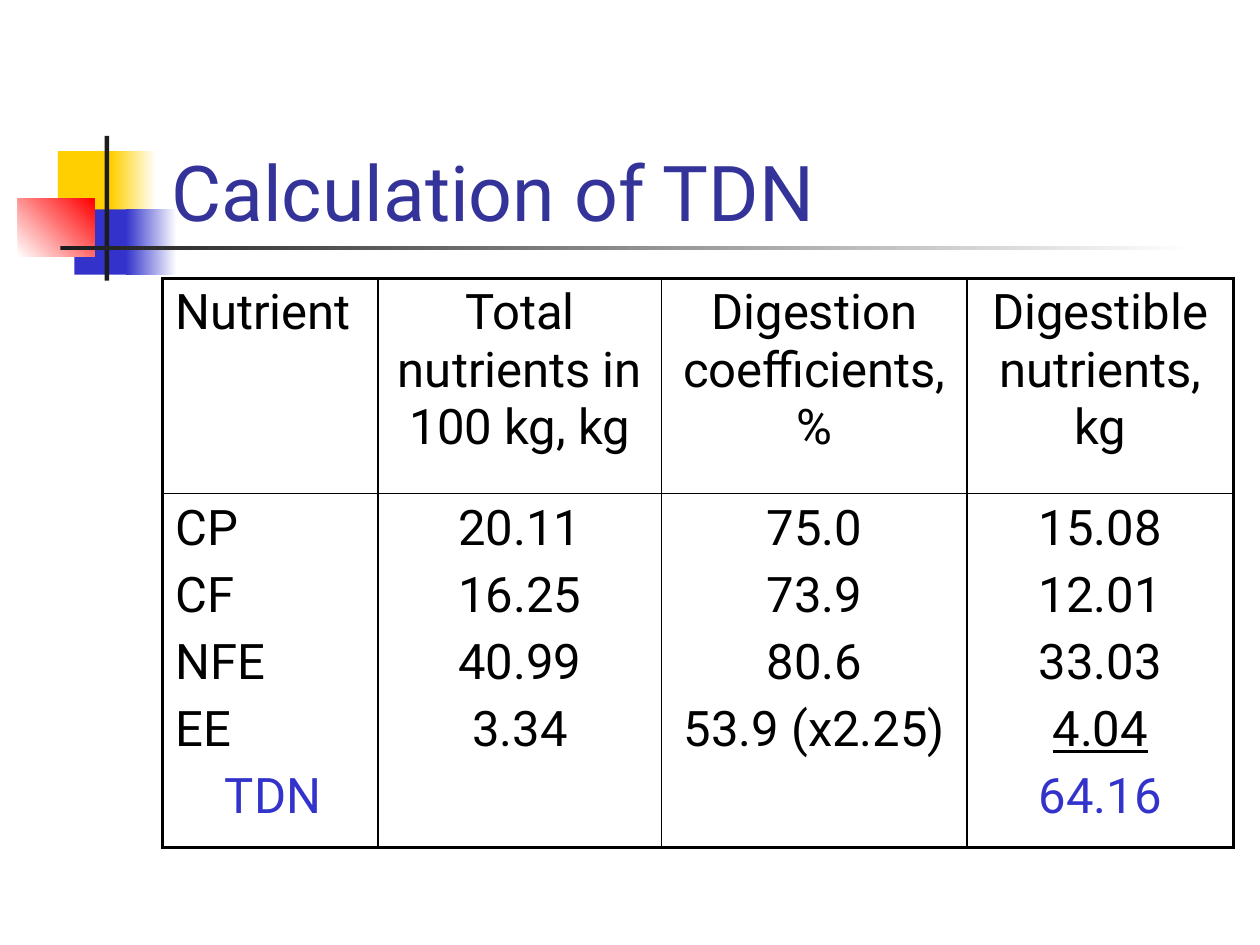
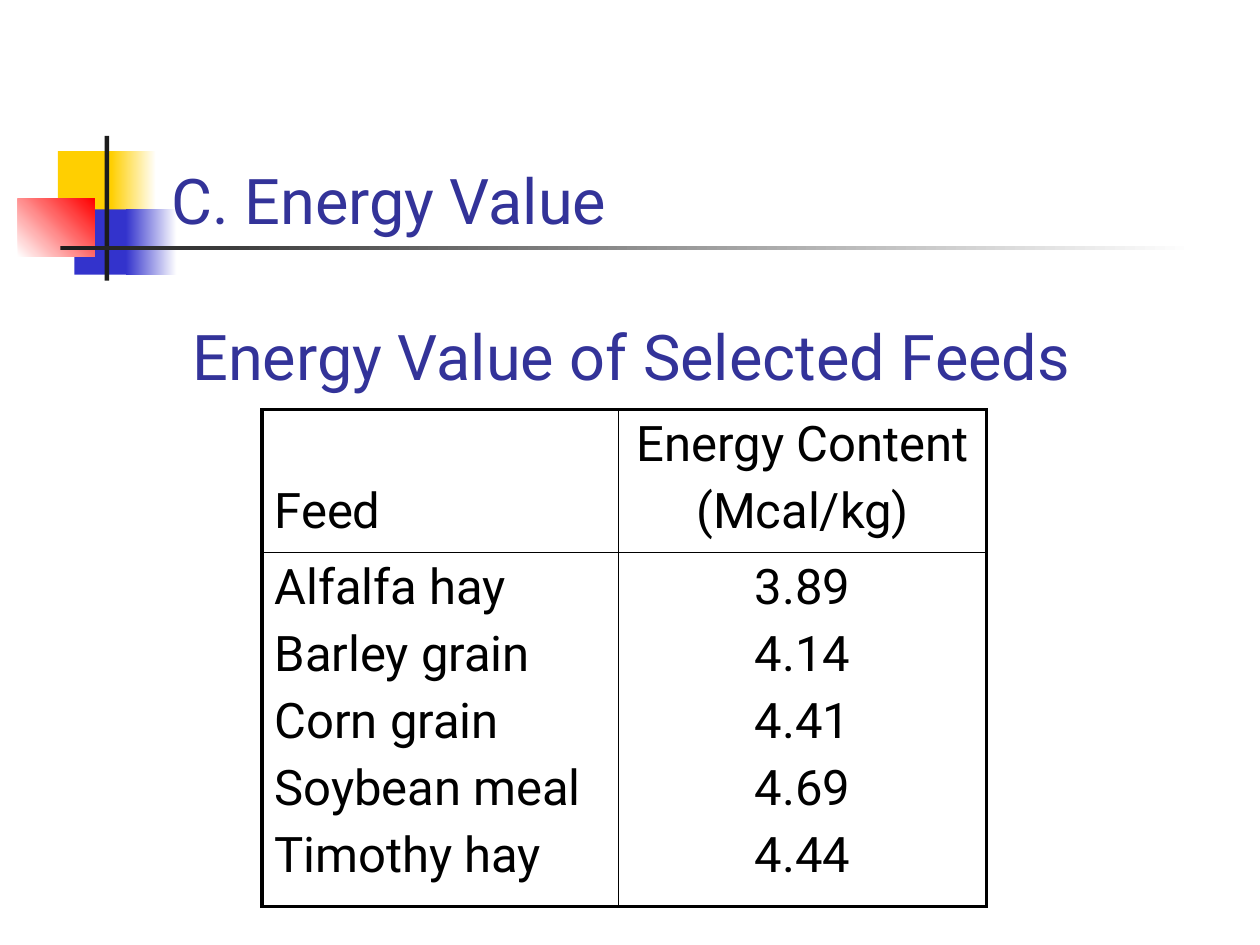
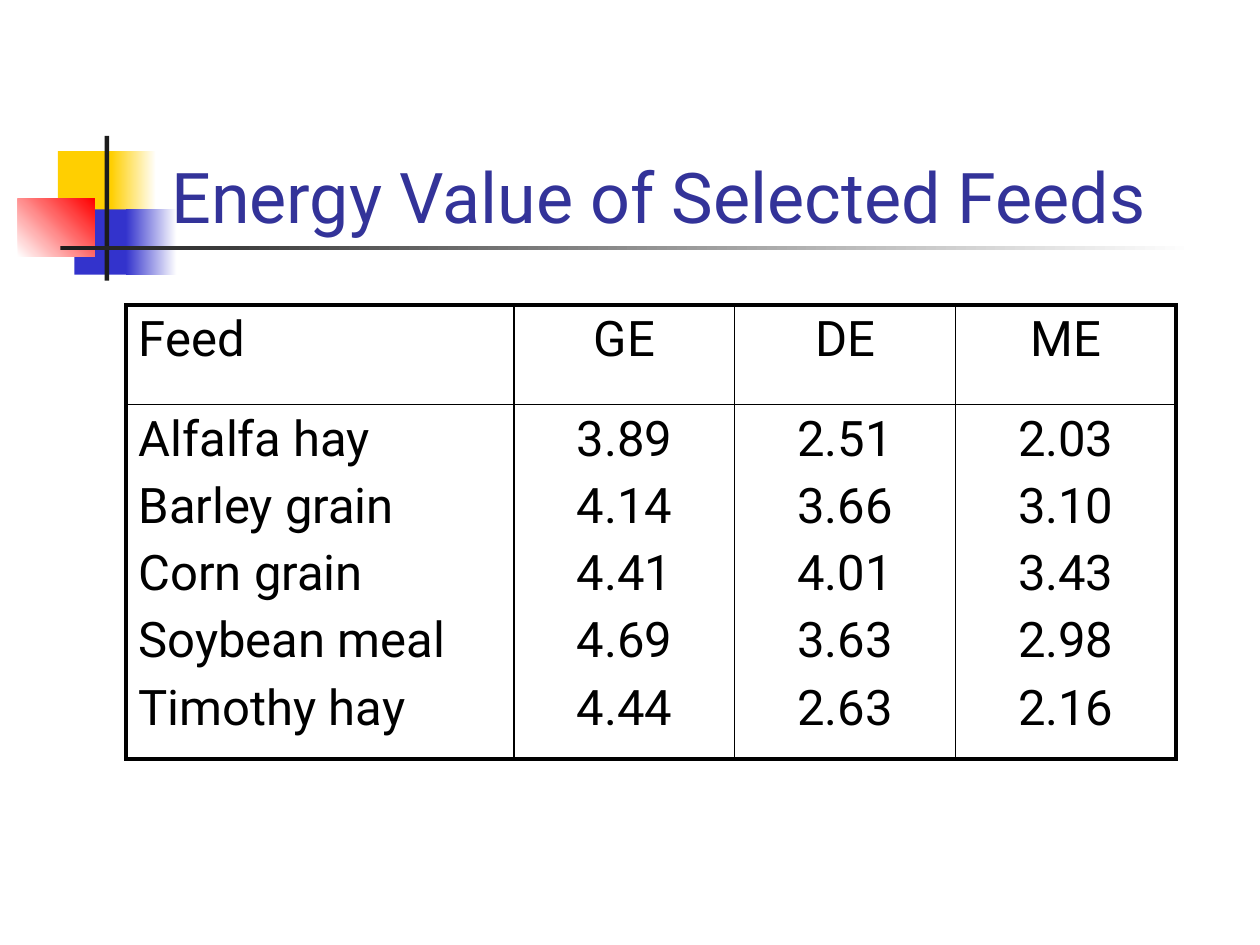
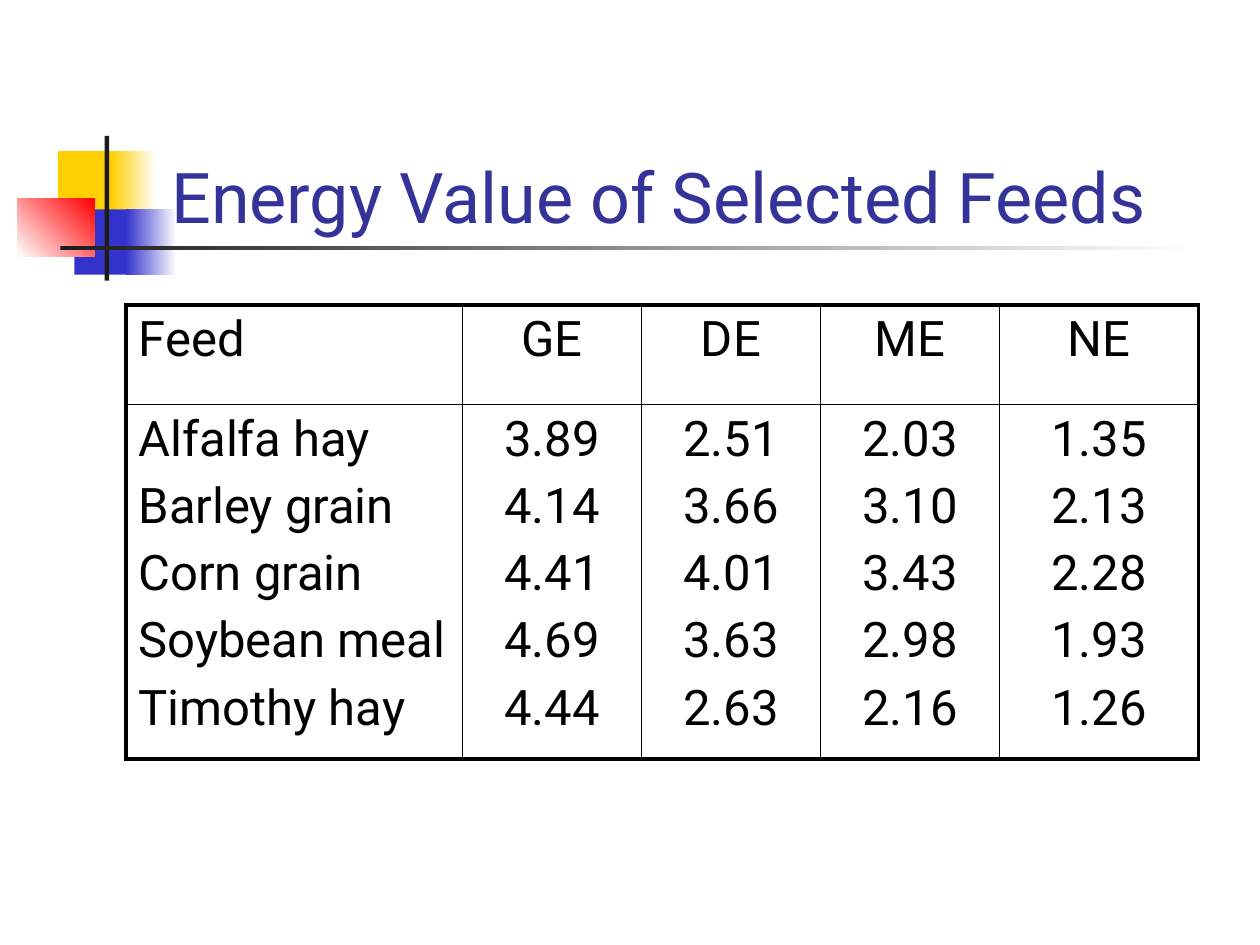
from dataclasses import dataclass
from typing import Optional

from lxml.etree import SubElement
from pptx import Presentation
from pptx.dml.color import RGBColor
from pptx.enum.shapes import MSO_SHAPE as Shape
from pptx.enum.text import MSO_ANCHOR as Anchor, MSO_AUTO_SIZE as AutoSize, PP_ALIGN as Align
from pptx.oxml.ns import qn
from pptx.util import Cm, Pt

# Shared look
FONT = "Roboto"
WHITE = RGBColor(0xFF, 0xFF, 0xFF)
BLACK = RGBColor(0x00, 0x00, 0x00)
CHARCOAL = RGBColor(0x1C, 0x1C, 0x1C)
YELLOW = RGBColor(0xFF, 0xCF, 0x01)
RED = RGBColor(0xFF, 0x00, 0x00)
BLUE = RGBColor(0x33, 0x33, 0xCC)
NAVY = RGBColor(0x33, 0x33, 0x99)

TITLE_ONLY = 5
HEADING_SIZE = (Cm(21.64), Cm(3.18))
TABLE_PT = 28
THICK, THIN = Pt(2.25), Pt(1)
BODY_ROW = 7.14


@dataclass(frozen=True)
class Block:
    """A rectangle of the emblem, in cm; `end` makes it a gradient."""
    left: float
    top: float
    width: float
    height: float
    color: RGBColor
    end: Optional[RGBColor] = None
    angle: int = 0


@dataclass(frozen=True)
class Line:
    text: str
    color: RGBColor = BLACK
    underline: bool = False
    indent: float = 0


@dataclass(frozen=True)
class Column:
    header: str
    values: tuple


@dataclass(frozen=True)
class Grid:
    left: float
    top: float
    widths: tuple
    header_row: float
    columns: tuple
    header_anchor: Anchor = Anchor.TOP


@dataclass(frozen=True)
class Page:
    title: str
    title_pt: int
    grid: Grid
    subheading: str = ""


EMBLEM = (
    Block(1.17, 3.05, 1.22, 1.32, YELLOW),
    Block(2.24, 3.05, 0.91, 1.32, YELLOW, WHITE),
    Block(1.5, 4.22, 1.17, 1.32, BLUE),
    Block(2.54, 4.22, 1.02, 1.32, BLUE, WHITE),
    Block(0.36, 4.01, 1.55, 1.17, WHITE, RED, 45),
    Block(2.11, 2.74, 0.09, 2.92, CHARCOAL),
    Block(1.22, 4.95, 22.86, 0.09, CHARCOAL, WHITE),
)

# Table contents
NUTRIENTS = (
    Column("Nutrient", ("CP", "CF", "NFE", "EE", Line("TDN", BLUE, indent=1))),
    Column("Total nutrients in 100 kg, kg", ("20.11", "16.25", "40.99", "3.34")),
    Column("Digestion coefficients, %", ("75.0", "73.9", "80.6", "53.9 (x2.25)")),
    Column("Digestible nutrients, kg",
           ("15.08", "12.01", "33.03", Line("4.04", underline=True), Line("64.16", BLUE))),
)
FEED = Column("Feed", ("Alfalfa hay", "Barley grain", "Corn grain", "Soybean meal", "Timothy hay"))
GE = Column("GE", ("3.89", "4.14", "4.41", "4.69", "4.44"))
DE = Column("DE", ("2.51", "3.66", "4.01", "3.63", "2.63"))
ME = Column("ME", ("2.03", "3.10", "3.43", "2.98", "2.16"))
NE = Column("NE", ("1.35", "2.13", "2.28", "1.93", "1.26"))
CONTENT = Column("Energy Content\n(Mcal/kg)", GE.values)

SELECTED = "Energy Value of Selected Feeds"
PAGES = (
    Page("Calculation of TDN", 44,
         Grid(3.28, 5.61, (4.34, 5.72, 6.15, 5.38), 4.34, NUTRIENTS)),
    Page("C. Energy Value", 36,
         Grid(5.28, 8.26, (7.19, 7.42), 2.87, (FEED, CONTENT), Anchor.BOTTOM), SELECTED),
    Page(SELECTED, 40,
         Grid(2.54, 6.15, (7.82,) + (4.45,) * 3, 2.01, (FEED, GE, DE, ME))),
    Page(SELECTED, 40,
         Grid(2.54, 6.15, (6.78,) + (3.61,) * 3 + (4.01,), 2.01, (FEED, GE, DE, ME, NE))),
)


def write(tf, lines, *, size: float, align=Align.LEFT, space_before: float = 0) -> None:
    """Fill a text frame with one paragraph for each line."""
    tf.word_wrap = True
    for i, item in enumerate(lines):
        line = item if isinstance(item, Line) else Line(item)
        p = tf.paragraphs[0] if i == 0 else tf.add_paragraph()
        p.alignment = align
        p.space_before = Pt(space_before)
        if line.indent:
            p._p.get_or_add_pPr().set("marL", str(Cm(line.indent)))
        r = p.add_run()
        r.text = line.text
        r.font.name = FONT
        r.font.size = Pt(size)
        r.font.color.rgb = line.color
        if line.underline:
            r.font.underline = True


def write_heading(sp, text: str, size: float, left: float, top: float) -> None:
    sp.left, sp.top = Cm(left), Cm(top)
    sp.width, sp.height = HEADING_SIZE
    tf = sp.text_frame
    write(tf, [Line(text, NAVY)], size=size)
    tf.auto_size = AutoSize.NONE
    tf.vertical_anchor = Anchor.BOTTOM


def add_block(s, block: Block):
    box = (Cm(v) for v in (block.left, block.top, block.width, block.height))
    sp = s.shapes.add_shape(Shape.RECTANGLE, *box)
    sp.shadow.inherit = False
    sp.line.fill.background()
    if block.end is None:
        sp.fill.solid()
        sp.fill.fore_color.rgb = block.color
    else:
        sp.fill.gradient()
        sp.fill.gradient_angle = block.angle
        for stop, color in zip(sp.fill.gradient_stops, (block.color, block.end)):
            stop.color.rgb = color
    return sp


def move_emblem_to_layout(s) -> None:
    """Draw the emblem once and put it behind everything on the slide's layout."""
    tree = s.slide_layout.shapes._spTree
    for i, block in enumerate(EMBLEM):
        element = add_block(s, block).element
        element.nvSpPr.cNvPr.set("id", str(20 + i))
        tree.insert(2 + i, element)


def set_borders(cell, edges: dict) -> None:
    tc_pr = cell._tc.get_or_add_tcPr()
    for side in "LRTB":
        ln = SubElement(tc_pr, qn(f"a:ln{side}"), w=str(edges[side]))
        fill = SubElement(ln, qn("a:solidFill"))
        SubElement(fill, qn("a:srgbClr"), val=str(BLACK))


def add_grid(s, grid: Grid) -> None:
    heights = (grid.header_row, BODY_ROW)
    last = len(grid.columns) - 1
    table = s.shapes.add_table(2, last + 1, Cm(grid.left), Cm(grid.top),
                               Cm(sum(grid.widths)), Cm(sum(heights))).table
    table.first_row = table.horz_banding = False
    for row, height in zip(table.rows, heights):
        row.height = Cm(height)
    for c, (column, width) in enumerate(zip(grid.columns, grid.widths)):
        table.columns[c].width = Cm(width)
        for r, lines in enumerate((column.header.split("\n"), column.values)):
            cell = table.cell(r, c)
            write(cell.text_frame, lines, size=TABLE_PT, space_before=0.2 * TABLE_PT,
                  align=Align.CENTER if c else Align.LEFT)
            set_borders(cell, {"L": THIN if c else THICK, "R": THICK if c == last else THIN,
                               "T": THIN if r else THICK, "B": THICK if r else THIN})
            cell.fill.background()
        header = table.cell(0, c)
        header.vertical_anchor = grid.header_anchor
        if grid.header_anchor == Anchor.BOTTOM:
            header.margin_bottom = Cm(0.24)


def main() -> None:
    prs = Presentation()
    prs.slide_width, prs.slide_height = Cm(25.4), Cm(19.05)
    for i, page in enumerate(PAGES):
        s = prs.slides.add_slide(prs.slide_layouts[TITLE_ONLY])
        if i == 0:
            move_emblem_to_layout(s)
        write_heading(s.shapes.title, page.title, page.title_pt, 3.2, 1.73)
        add_grid(s, page.grid)
        if page.subheading:
            sp = s.shapes.add_textbox(0, 0, *HEADING_SIZE)
            write_heading(sp, page.subheading, 36, 3.63, 4.88)
    prs.save("out.pptx")


if __name__ == "__main__":
    main()
